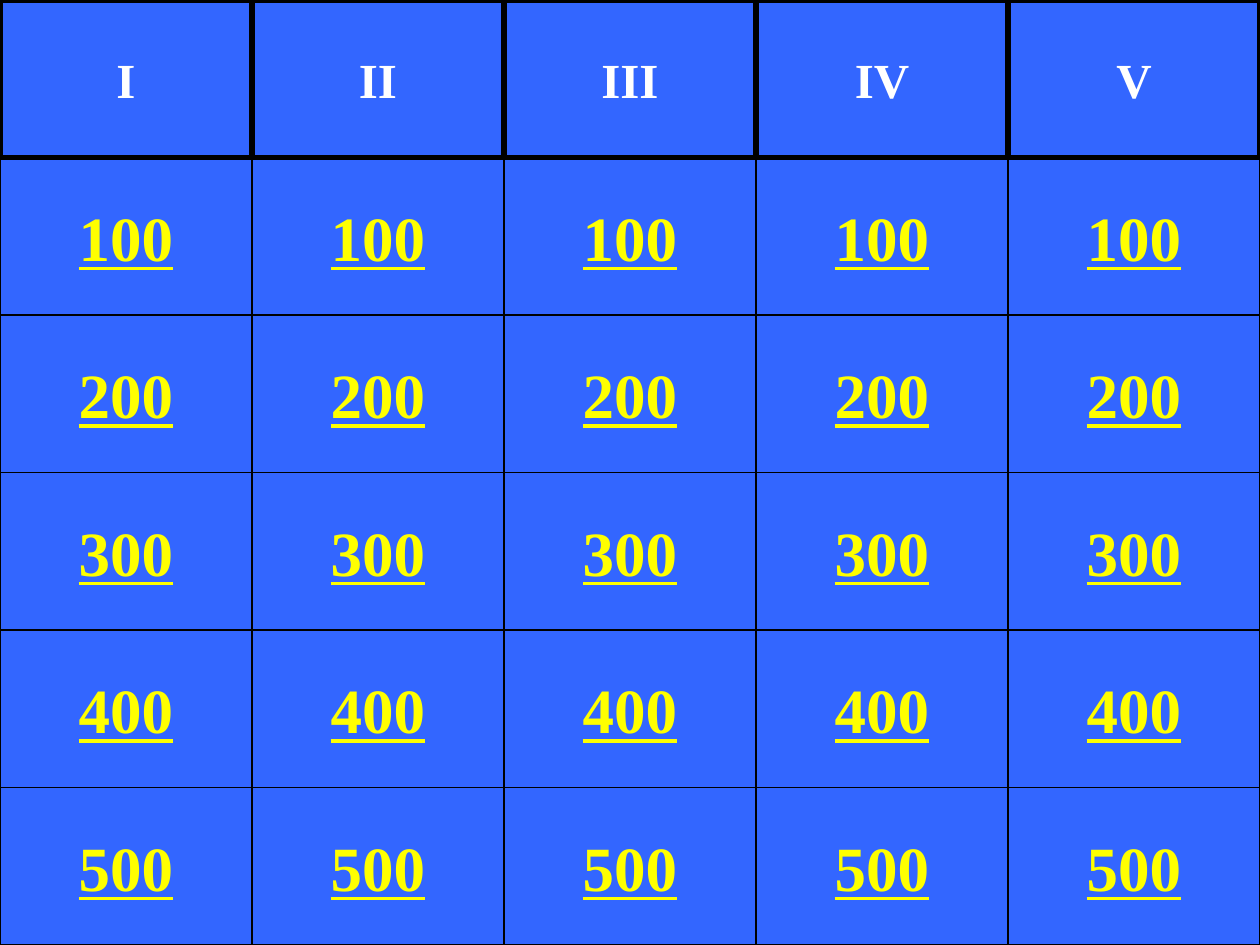
from pptx import Presentation
from pptx.dml.color import RGBColor
from pptx.enum.shapes import MSO_SHAPE
from pptx.enum.text import MSO_ANCHOR, PP_ALIGN
from pptx.util import Pt

RECTANGLE = MSO_SHAPE.RECTANGLE
BUTTON = MSO_SHAPE.ACTION_BUTTON_CUSTOM
MIDDLE = MSO_ANCHOR.MIDDLE
CENTER = PP_ALIGN.CENTER

PX = 9525  # EMU per px, 96 px to the inch
BOARD_W, BOARD_H = 960, 720
FONT = "Times New Roman"
COLORS = {"board": "3366FF", "border": "000000", "category": "FFFFFF", "points": "FFFF00"}

CATEGORIES = ["I", "II", "III", "IV", "V"]
POINTS = ["100", "200", "300", "400", "500"]
CELL_W = BOARD_W // len(CATEGORIES)
CELL_H = BOARD_H // (len(POINTS) + 1)


def color(name):
    return RGBColor.from_string(COLORS[name])


def add_cell(kind, column, row, label, border_pt, size_pt, ink, underline):
    """Add one board cell with its centred label."""
    cell = slide.shapes.add_shape(
        kind, column * CELL_W * PX, row * CELL_H * PX, CELL_W * PX, CELL_H * PX)
    cell.shadow.inherit = False
    cell.fill.solid()
    cell.fill.fore_color.rgb = color("board")
    cell.line.color.rgb = color("border")
    cell.line.width = Pt(border_pt)
    frame = cell.text_frame
    frame.word_wrap = False
    frame.vertical_anchor = MIDDLE
    paragraph = frame.paragraphs[0]
    paragraph.alignment = CENTER
    run = paragraph.add_run()
    run.text = label
    run.font.name = FONT
    run.font.size = Pt(size_pt)
    run.font.bold = True
    run.font.underline = underline
    run.font.color.rgb = color(ink)


prs = Presentation()
prs.slide_width = BOARD_W * PX
prs.slide_height = BOARD_H * PX
slide = prs.slides.add_slide(prs.slide_layouts[6])
slide.background.fill.solid()
slide.background.fill.fore_color.rgb = color("board")

for column in range(len(CATEGORIES)):
    for row, points in enumerate(POINTS, start=1):
        add_cell(BUTTON, column, row, points, 0.75, 36, "points", True)

# Category cells come last so their thick borders lie over the buttons
for column, category in enumerate(CATEGORIES):
    add_cell(RECTANGLE, column, 0, category, 3, 28, "category", None)

prs.save("out.pptx")
